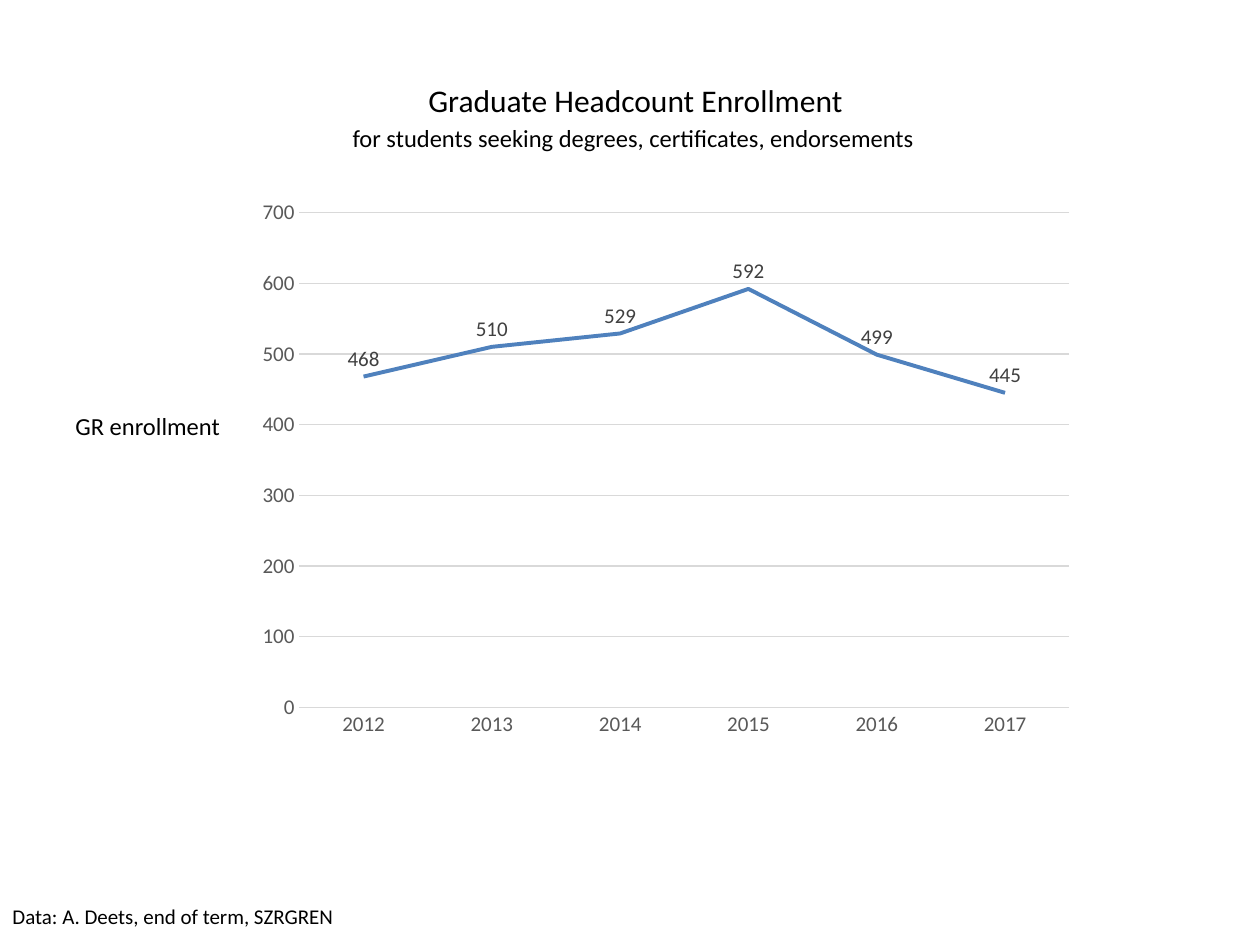
import pptx
import pptx.chart.data
import pptx.dml.color
import pptx.enum.chart
import pptx.enum.text
import pptx.util

Pt = pptx.util.Pt
FONT = "Calibri"
BLACK, GRID_GREY, AXIS_GREY, LABEL_GREY, BLUE = "000000", "D9D9D9", "595959", "404040", "4F81BD"


def paint(color_format, color):
    """Set a font or fill colour from a hex string."""
    color_format.rgb = pptx.dml.color.RGBColor.from_string(color)


def style_font(font, size, color):
    """Apply the slide's typeface with a size and colour."""
    font.name = FONT
    font.size = Pt(size)
    paint(font.color, color)


def style_line(line, color, width):
    """Give a line a solid colour and a width in points."""
    line.fill.solid()
    paint(line.fill.fore_color, color)
    line.width = Pt(width)


def fill_text(holder, text, size, wrap=False):
    """Write one left-aligned paragraph into a shape."""
    frame = holder.text_frame
    frame.text = text
    frame.word_wrap = wrap
    frame.auto_size = pptx.enum.text.MSO_AUTO_SIZE.SHAPE_TO_FIT_TEXT
    frame.vertical_anchor = pptx.enum.text.MSO_ANCHOR.TOP
    paragraph = frame.paragraphs[0]
    paragraph.alignment = pptx.enum.text.PP_ALIGN.LEFT
    style_font(paragraph.font, size, BLACK)


def add_heading(slide, text, left, top, width, height, size):
    """Place and fill the title placeholder."""
    heading = slide.shapes.title
    heading.left, heading.top = Pt(left), Pt(top)
    heading.width, heading.height = Pt(width), Pt(height)
    fill_text(heading, text, size)


def add_caption(slide, text, left, top, width, height, size, wrap=False):
    """Add a text box."""
    caption = slide.shapes.add_textbox(Pt(left), Pt(top), Pt(width), Pt(height))
    fill_text(caption, text, size, wrap)


def style_axis(axis):
    """Format the tick labels and remove the tick marks of an axis."""
    axis.major_tick_mark = pptx.enum.chart.XL_TICK_MARK.NONE
    axis.minor_tick_mark = pptx.enum.chart.XL_TICK_MARK.NONE
    style_font(axis.tick_labels.font, 12, AXIS_GREY)


def add_enrollment_chart(slide, left, top, width, height):
    """Add the line chart of headcount by year."""
    enrollment = pptx.chart.data.CategoryChartData()
    enrollment.categories = [str(year) for year in range(2012, 2018)]
    enrollment.add_series("Series 1", (468, 510, 529, 592, 499, 445))
    chart = slide.shapes.add_chart(
        pptx.enum.chart.XL_CHART_TYPE.LINE,
        Pt(left), Pt(top), Pt(width), Pt(height), enrollment).chart
    chart.has_title = False
    chart.has_legend = False
    style_font(chart.font, 10, BLACK)

    years, headcount = chart.category_axis, chart.value_axis
    style_axis(years)
    style_axis(headcount)
    style_line(years.format.line, GRID_GREY, 0.75)
    headcount.format.line.fill.background()
    headcount.minimum_scale, headcount.maximum_scale = 0, 700
    headcount.major_unit = 100
    style_line(headcount.major_gridlines.format.line, GRID_GREY, 0.75)

    plot = chart.plots[0]
    plot.vary_by_categories = False
    graduates = plot.series[0]
    graduates.smooth = False
    graduates.marker.style = pptx.enum.chart.XL_MARKER_STYLE.NONE
    style_line(graduates.format.line, BLUE, 2.25)
    labels = graduates.data_labels
    labels.show_value = True
    labels.position = pptx.enum.chart.XL_LABEL_POSITION.ABOVE
    style_font(labels.font, 12, LABEL_GREY)


def main():
    """Build the enrollment slide and save it."""
    deck = pptx.Presentation()
    deck.slide_width, deck.slide_height = Pt(720), Pt(540)
    slide = deck.slides.add_slide(deck.slide_layouts.get_by_name("Title Only"))
    add_enrollment_chart(slide, 140.4, 108, 480.2, 319.7)
    add_heading(slide, "Graduate Headcount Enrollment", 237.6, 42.5, 254.2, 29, 18)
    add_caption(slide, "for students seeking degrees, certificates, endorsements",
                194.4, 67, 371.5, 24.5, 14, wrap=True)
    add_caption(slide, "GR enrollment", 36, 231.1, 98, 24.5, 14)
    add_caption(slide, "Data: A. Deets, end of term, SZRGREN", 0, 512.6, 200.2, 21.6, 12)
    deck.save("out.pptx")


if __name__ == "__main__":
    main()
